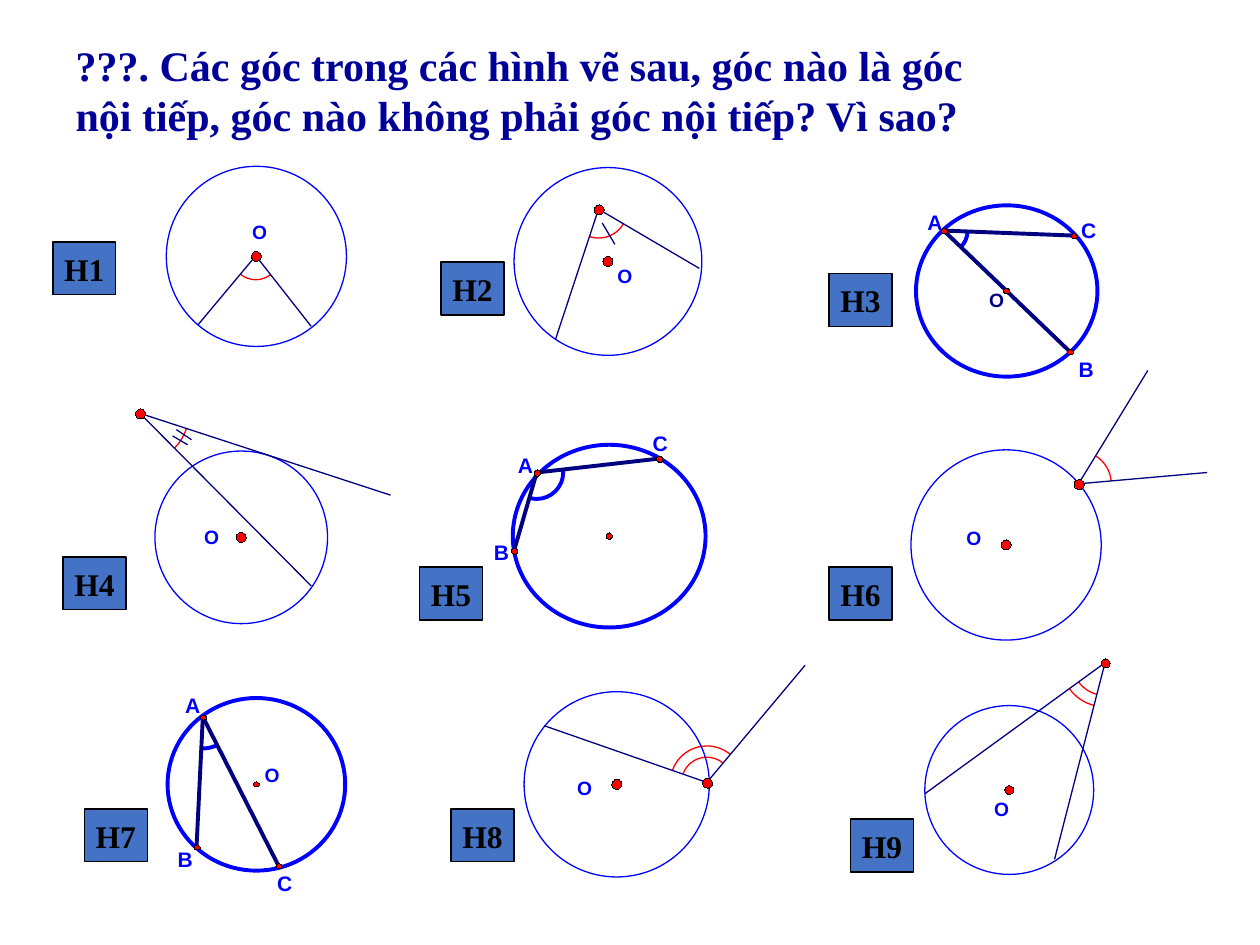
from copy import deepcopy
from dataclasses import dataclass
from math import atan2, ceil, cos, floor, pi, remainder, sin, tan, tau

from pptx import Presentation
from pptx.dml.color import RGBColor
from pptx.enum.shapes import MSO_CONNECTOR as Connector, MSO_SHAPE as Preset
from pptx.enum.text import MSO_ANCHOR as Anchor, MSO_AUTO_SIZE as Fit, PP_ALIGN as Align
from pptx.oxml.ns import qn
from pptx.util import Pt
from lxml.etree import SubElement

EMU_PER_PX = 9144


@dataclass(frozen=True)
class Theme:
    circle: str = "0000FF"
    ray: str = "000080"
    arc: str = "FF0000"
    dot: str = "FF0000"
    tag: str = "4472C4"
    ink: str = "000000"
    title: str = "000099"
    serif: str = "Times New Roman"
    sans: str = "Arial"
    title_size: int = 24
    tag_size: int = 18
    point_size: int = 12
    centre_size: int = 11
    thin: float = 0.75
    thick: float = 2.25


@dataclass(frozen=True)
class Figure:
    name: str
    tag: tuple
    circle: tuple
    apex: tuple
    ends: tuple
    radii: tuple
    labels: dict
    ticks: tuple = ()
    dot: tuple = (8, 8)
    bold: bool = False
    centre_colour: str = "0000FF"


FIGURES = [
    Figure("H1", (42, 192), (132, 132, 143, 143), (203, 203), ((157, 258), (247, 259)),
           (19,), {"O": (200, 175)}),
    Figure("H2", (350, 208), (408, 133, 149, 149), (475, 166), ((555, 213), (441, 269)),
           (23,), {"O": (490, 210)}, ticks=((478, 177, 488, 194),)),
    Figure("H3", (658, 217), (727, 163, 144, 136), (749, 183), ((852, 187), (849, 279)),
           (19,), {"O": (785, 229), "A": (736, 166), "B": (856, 283), "C": (858, 173)},
           dot=(5, 4), bold=True, centre_colour="000080"),
    Figure("H4", (50, 442), (123, 358, 137, 137), (111, 328), ((310, 393), (247, 465)),
           (39,), {"O": (162, 417)}, ticks=((137, 346, 149, 353), (140, 341, 152, 349))),
    Figure("H5", (333, 450), (407, 353, 153, 145), (426, 375), ((523, 364), (408, 437)),
           (21,), {"A": (411, 359), "B": (392, 428), "C": (518, 342)}, dot=(5, 5), bold=True),
    Figure("H6", (658, 450), (723, 357, 151, 151), (856, 384), ((911, 294), (958, 375)),
           (26,), {"O": (767, 418)}),
    Figure("H7", (67, 642), (133, 554, 141, 137), (161, 569), ((221, 687), (156, 672)),
           (25,), {"O": (210, 606), "A": (147, 550), "B": (141, 672), "C": (220, 691)},
           dot=(5, 4), bold=True),
    Figure("H8", (358, 642), (416, 549, 147, 147), (561, 621), ((432, 576), (639, 528)),
           (29, 20), {"O": (458, 616)}),
    Figure("H9", (675, 650), (734, 560, 134, 134), (877, 526), ((837, 682), (734, 630)),
           (35, 26), {"O": (789, 633)}, dot=(7, 7)),
]


def px(*lengths):
    return [round(length * EMU_PER_PX) for length in lengths]


def bezier_points(apex, ends, radius):
    x, y = apex
    first, last = (atan2(end_y - y, end_x - x) for end_x, end_y in ends)
    last = first + remainder(last - first, tau)
    low, high = sorted((first, last))
    quarters = [n * pi / 2 for n in range(ceil(low / (pi / 2)), floor(high / (pi / 2)) + 1)]
    stops = sorted([low, *quarters, high], reverse=last < first)
    points = [(x + radius * cos(first), y + radius * sin(first))]
    for a, b in zip(stops, stops[1:]):
        pull = 4 / 3 * tan((b - a) / 4)
        for c, s in ((cos(a) - pull * sin(a), sin(a) + pull * cos(a)),
                     (cos(b) + pull * sin(b), sin(b) - pull * cos(b)),
                     (cos(b), sin(b))):
            points.append((x + radius * c, y + radius * s))
    return points


class Board:
    def __init__(self, slide, theme):
        self.slide = slide
        self.shapes = slide.shapes
        self.theme = theme

    def style_runs(self, frame, font, size, colour):
        for paragraph in frame.paragraphs:
            for run in paragraph.runs:
                run.font.name = font
                run.font.size = Pt(size)
                run.font.bold = True
                run.font.color.rgb = RGBColor.from_string(colour)

    def outline(self, shape, colour, weight):
        shape.line.color.rgb = RGBColor.from_string(colour)
        shape._element.spPr.find(qn("a:ln")).set("w", str(Pt(weight)))

    def preset(self, kind, box, fill, colour, weight):
        shape = self.shapes.add_shape(kind, *px(*box))
        shape.shadow.inherit = False
        if fill:
            shape.fill.solid()
            shape.fill.fore_color.rgb = RGBColor.from_string(fill)
        else:
            shape.fill.background()
        self.outline(shape, colour, weight)
        return shape

    def title(self, lines):
        heading = self.shapes.title
        heading.left, heading.top, heading.width, heading.height = px(50, 25, 792, 92)
        frame = heading.text_frame
        frame.text = "\n".join(lines)
        frame.word_wrap = False
        frame.auto_size = Fit.NONE
        frame.vertical_anchor = Anchor.MIDDLE
        for paragraph in frame.paragraphs:
            paragraph.alignment = Align.LEFT
        self.style_runs(frame, self.theme.serif, self.theme.title_size, self.theme.title)

    def tag(self, name, corner):
        look = self.theme
        plate = self.preset(Preset.RECTANGLE, (*corner, 50, 42), look.tag, look.ink, look.thin)
        frame = plate.text_frame
        frame.text = name
        frame.word_wrap = False
        frame.vertical_anchor = Anchor.MIDDLE
        frame.paragraphs[0].alignment = Align.CENTER
        self.style_runs(frame, look.serif, look.tag_size, look.ink)

    def segment(self, start, end, weight):
        line = self.shapes.add_connector(Connector.STRAIGHT, *px(*start, *end))
        self.outline(line, self.theme.ray, weight)
        SubElement(line._element.spPr, qn("a:effectLst"))

    def arc(self, apex, ends, radius, colour, weight):
        start, *rest = [px(*point) for point in bezier_points(apex, ends, radius)]
        builder = self.shapes.build_freeform(*start)
        builder.add_line_segments([*rest, px(*apex)], close=True)
        sector = builder.convert_to_shape()
        sector.shadow.inherit = False
        sector.fill.background()
        self.outline(sector, colour, weight)
        wedge = next(sector._element.iter(qn("a:path")))
        steps = wedge.findall(qn("a:lnTo"))[:-1]
        for first in range(0, len(steps), 3):
            curve = steps[first]
            curve.tag = qn("a:cubicBezTo")
            for step in steps[first + 1:first + 3]:
                curve.append(step[0])
                wedge.remove(step)
        edge = deepcopy(wedge)
        for closing in edge[-2:]:
            edge.remove(closing)
        edge.set("fill", "none")
        wedge.set("stroke", "0")
        wedge.addprevious(edge)

    def dot(self, centre, size):
        (x, y), (width, height) = centre, size
        self.preset(Preset.OVAL, (x - width / 2, y - height / 2, width, height),
                    self.theme.dot, self.theme.ink, 0)

    def label(self, letter, corner, size, colour):
        frame = self.shapes.add_textbox(*px(*corner, 12, 18)).text_frame
        frame.margin_left = frame.margin_right = frame.margin_top = frame.margin_bottom = 0
        frame.text = letter
        frame.word_wrap = False
        frame.auto_size = Fit.SHAPE_TO_FIT_TEXT
        self.style_runs(frame, self.theme.sans, size, colour)

    def figure(self, fig):
        look = self.theme
        weight = look.thick if fig.bold else look.thin
        left, top, width, height = fig.circle
        for radius in fig.radii:
            self.arc(fig.apex, fig.ends, radius, look.circle if fig.bold else look.arc, weight)
        self.preset(Preset.OVAL, fig.circle, None, look.circle, weight)
        for end in fig.ends:
            self.segment(fig.apex, end, weight)
        for x1, y1, x2, y2 in fig.ticks:
            self.segment((x1, y1), (x2, y2), weight)
        marked = [(x + 0.5, y + 0.5) for x, y in (fig.apex, *(fig.ends if fig.bold else ()))]
        for point in dict.fromkeys([(left + width / 2, top + height / 2), *marked]):
            self.dot(point, fig.dot)
        for letter, corner in fig.labels.items():
            if letter == "O":
                self.label(letter, corner, look.centre_size, fig.centre_colour)
            else:
                self.label(letter, corner, look.point_size, look.circle)
        self.tag(fig.name, fig.tag)


def main():
    deck = Presentation()
    deck.slide_width, deck.slide_height = px(1000, 750)
    board = Board(deck.slides.add_slide(deck.slide_layouts[5]), Theme())
    board.title(["???. Các góc trong các hình vẽ sau, góc nào là góc",
                 "nội tiếp, góc nào không phải góc nội tiếp? Vì sao?"])
    for fig in FIGURES:
        board.figure(fig)
    deck.save("out.pptx")


if __name__ == "__main__":
    main()
